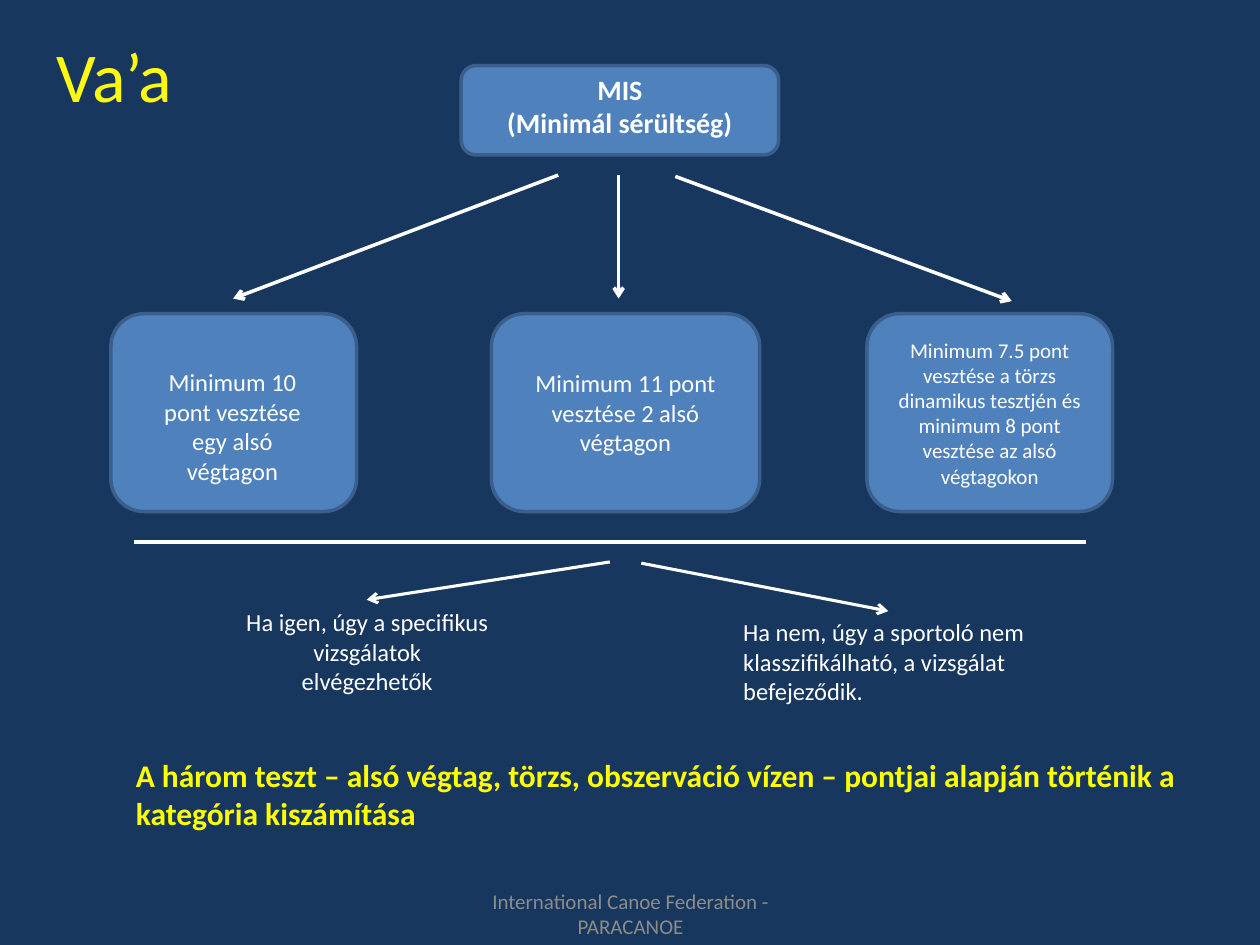
from lxml import etree
from pptx import Presentation
from pptx import util as u
from pptx.dml.color import RGBColor
from pptx.enum import shapes, text
from pptx.oxml import ns

PX = 9144
NAVY = RGBColor(0x17, 0x37, 0x5E)
BLUE = RGBColor(0x4F, 0x81, 0xBD)
EDGE = RGBColor(0x3A, 0x5F, 0x8C)
WHITE = RGBColor(0xFF, 0xFF, 0xFF)
GREY = RGBColor(0x8C, 0x8C, 0x8C)
YELLOW = RGBColor(0xFF, 0xFF, 0x00)
TITLE_YELLOW = RGBColor(0xFE, 0xF9, 0x13)

LEFT, CENTER = text.PP_ALIGN.LEFT, text.PP_ALIGN.CENTER
TOP, MIDDLE = text.MSO_ANCHOR.TOP, text.MSO_ANCHOR.MIDDLE


def emu(*lengths):
    return [u.Emu(n * PX) for n in lengths]


def write(sp, lines, size, color=WHITE, bold=False, align=CENTER, anchor=TOP,
          wrap=True, margins=(10, 5, 10, 5)):
    tf = sp.text_frame
    left, top, right, bottom = emu(*margins)
    frame = {"word_wrap": wrap, "vertical_anchor": anchor, "margin_left": left,
             "margin_top": top, "margin_right": right, "margin_bottom": bottom}
    for name, value in frame.items():
        setattr(tf, name, value)
    tf.text = "\n".join(lines)
    for p in tf.paragraphs:
        p.alignment = align
        for r in p.runs:
            for name, value in {"name": "Calibri", "size": u.Pt(size), "bold": bold}.items():
                setattr(r.font, name, value)
            r.font.color.rgb = color


def label(s, box, lines, size, **fmt):
    write(s.shapes.add_textbox(*emu(*box)), lines, size, **fmt)


def node(s, box, lines, size, **fmt):
    sp = s.shapes.add_shape(shapes.MSO_SHAPE.FLOWCHART_ALTERNATE_PROCESS, *emu(*box))
    sp.shadow.inherit = False
    sp.fill.solid()
    sp.fill.fore_color.rgb = BLUE
    sp.line.color.rgb = EDGE
    sp.line.width = u.Pt(2)
    write(sp, lines, size, **fmt)


def line(s, start, end, width=2, arrow=True):
    c = s.shapes.add_connector(shapes.MSO_CONNECTOR.STRAIGHT, *emu(*start, *end))
    c.line.color.rgb = WHITE
    c.line.width = u.Pt(width)
    if arrow:
        etree.SubElement(c.line._get_or_add_ln(), ns.qn("a:tailEnd"), type="arrow")
    etree.SubElement(c._element.spPr, ns.qn("a:effectLst"))


def heading(s, x, y, w, h):
    sp = s.shapes.title
    sp.left, sp.top, sp.width, sp.height = emu(x, y, w, h)
    write(sp, ["Va’a"], 40, color=TITLE_YELLOW, align=LEFT)


def criteria(s, x, y):
    node(s, (x + 278, y, 252, 71), ["MIS", "(Minimál sérültség)"], 16,
         bold=True, margins=(10, 2, 10, 5))
    for start, end in [((355, 87), (97, 185)), ((448, 88), (715, 187)), ((403, 87), (403, 185))]:
        line(s, (x + start[0], y + start[1]), (x + end[0], y + end[1]))
    top, height = y + 197, 157
    node(s, (x, top, 195, height), ["Minimum 10 pont vesztése egy alsó végtagon"], 14,
         margins=(21, 35, 23, 5))
    node(s, (x + 302, top, 213, height), ["Minimum 11 pont vesztése 2 alsó végtagon"], 14,
         anchor=MIDDLE)
    node(s, (x + 600, top, 195, height),
         ["Minimum 7.5 pont vesztése a törzs dinamikus tesztjén és "
          "minimum 8 pont vesztése az alsó végtagokon"], 12, anchor=MIDDLE)


def outcomes(s, x, y, w):
    line(s, (x, y), (x + w, y), arrow=False)
    line(s, (x + 378, y + 16), (x + 185, y + 46), 1.75)
    line(s, (x + 403, y + 17), (x + 599, y + 55), 1.75)
    label(s, (x + 79, y + 47, 213, 81),
          ["Ha igen, úgy a specifikus vizsgálatok elvégezhetők"], 14)
    label(s, (x + 474, y + 55, 250, 81),
          ["Ha nem, úgy a sportoló nem", "klasszifikálható, a vizsgálat", "befejeződik."],
          14, align=LEFT, wrap=False)


def main():
    prs = Presentation()
    prs.slide_width, prs.slide_height = emu(1000, 750)
    s = prs.slides.add_slide(prs.slide_layouts[5])
    s.background.fill.solid()
    s.background.fill.fore_color.rgb = NAVY
    heading(s, 35, 21, 378, 77)
    criteria(s, 88, 52)
    outcomes(s, 106, 430, 756)
    label(s, (98, 595, 874, 71),
          ["A három teszt – alsó végtag, törzs, obszerváció vízen – "
           "pontjai alapján történik a kategória kiszámítása"],
          18, color=YELLOW, bold=True, align=LEFT)
    label(s, (342, 705, 317, 40), ["International Canoe Federation - PARACANOE"], 12,
          color=GREY, anchor=MIDDLE)
    prs.save("out.pptx")


if __name__ == "__main__":
    main()
